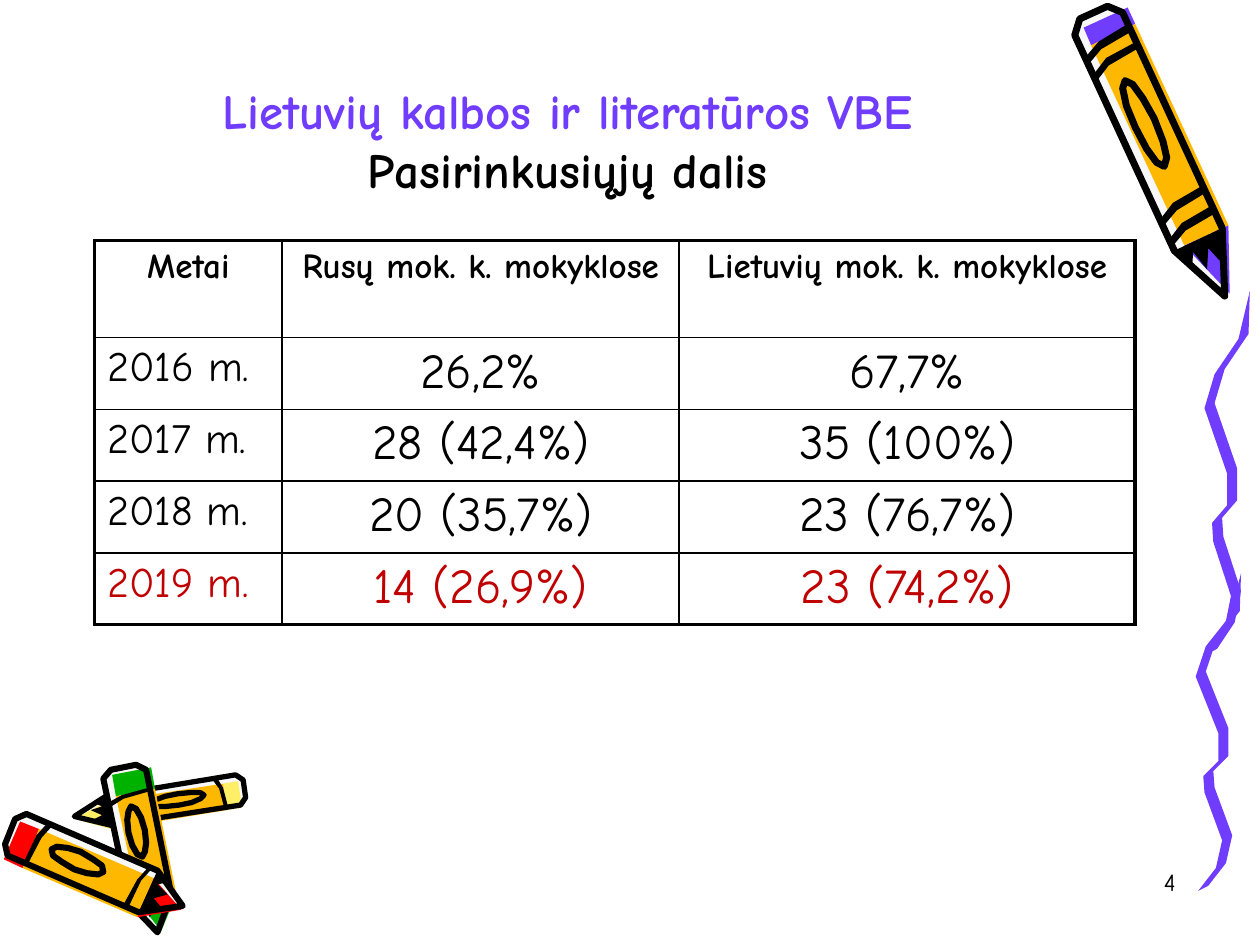
"""Build a slide with an exam table framed by crayons and a wavy ribbon."""
from math import cos, hypot, pi, sin
from lxml import etree
from pptx import Presentation
from pptx.dml.color import RGBColor
from pptx.enum.text import MSO_ANCHOR, PP_ALIGN
from pptx.oxml.ns import qn
from pptx.util import Pt

PX = 9144
FONT = "Comic Neue"
LEFT, MID, RIGHT = PP_ALIGN.LEFT, PP_ALIGN.CENTER, PP_ALIGN.RIGHT
TOP, LOW = MSO_ANCHOR.TOP, MSO_ANCHOR.BOTTOM
HUES = {"ink": "000000", "violet": "703DFF", "amber": "FFB800", "pale": "F8F8F8",
        "lemon": "FFEF66", "red": "FF0000", "green": "00B200", "mark": "C00000"}

TITLE = [("Lietuvių kalbos ir literatūros VBE", "violet"), ("Pasirinkusiųjų dalis", "ink")]
ROWS = [
    ("Metai", "Rusų mok. k. mokyklose", "Lietuvių mok. k. mokyklose"),
    ("2016 m.", "26,2%", "67,7%"),
    ("2017 m.", "28 (42,4%)", "35 (100%)"),
    ("2018 m.", "20 (35,7%)", "23 (76,7%)"),
    ("2019 m.", "14 (26,9%)", "23 (74,2%)"),
]
WIDTHS = [149, 315, 362]
HEIGHTS = [77, 57, 57, 57, 57]

CRAYONS = [
    {"tint": "lemon", "tail": (194, 626), "tip": (59, 648), "half": 12, "side": 1,
     "bands": [0.12], "pen": 3},
    {"tint": "green", "tail": (98, 609), "tip": (125, 740), "half": 17, "side": 1,
     "bands": [0.16], "pen": 3.5},
    {"tint": "red", "tail": (8, 660), "tip": (145, 719), "half": 18, "side": -1,
     "bands": [0.14, 0.72], "pen": 3.5},
    {"tint": "violet", "tail": (868, 10), "tip": (972, 235), "half": 21, "side": 1,
     "bands": [0.09, 0.15, 0.66, 0.73], "pen": 4},
]
NECK = 0.8
SHELL = [(0, -0.6), (0, 0.6), (0.04, 1), (NECK, 1), (1, 0), (NECK, -1), (0.04, -1)]
TEETH = [(NECK, -1), (NECK, 1), (0.89, 0.4), (0.84, 0.2), (0.9, -0.2), (0.83, -0.4),
         (0.88, -0.7)]

SPINE = [(36, 0), (31, 30), (12, 54), (4, 78), (22, 123), (22, 145), (10, 157),
         (11, 170), (25, 208), (20, 230), (6, 248)]
WAVES = [{"left": 949, "top": 455, "tall": 248}, {"left": 956, "top": 231, "tall": 284}]


def hue(name):
    return RGBColor.from_string(HUES[name])


def box(*sides):
    return [side * PX for side in sides]


def draw(slide, points, fill=None, pen=0):
    path = slide.shapes.build_freeform(*points[0], scale=PX)
    path.add_line_segments(points[1:], close=True)
    shape = path.convert_to_shape()
    shape.shadow.inherit = False
    if fill:
        shape.fill.solid()
        shape.fill.fore_color.rgb = hue(fill)
    else:
        shape.fill.background()
    if pen:
        shape.line.color.rgb = hue("ink")
        shape.line.width = Pt(pen)
    else:
        shape.line.fill.background()


def block(start, end):
    return [(start, -0.6), (start, 1.25), (end, 1.25), (end, -0.6)]


def band(start):
    front = [(start + 0.03, -1), (start, -0.3), (start - 0.01, 1)]
    back = [(along + 0.025, across) for along, across in front]
    return front + back[::-1]


def oval(steps=12):
    turns = [2 * pi * i / steps for i in range(steps)]
    return [(0.39 + 0.15 * cos(turn), 0.4 * sin(turn)) for turn in turns]


def crayon(slide, tint, tail, tip, half, side, bands, pen):
    """Place parts given as (share of length, share of half width)."""
    run, drop = tip[0] - tail[0], tip[1] - tail[1]
    size = hypot(run, drop)
    wide, high = side * half * drop / size, -side * half * run / size

    def place(part):
        return [(tail[0] + run * u + wide * v, tail[1] + drop * u + high * v)
                for u, v in part]

    cap = bands[0]
    point = [(NECK, -0.6), (NECK, 1.25), (1, 0.2)]
    layers = [(SHELL, "pale"), (block(0.03, cap), tint), (block(cap, NECK), "amber"),
              (point, tint), (TEETH, "ink")]
    layers += [(band(start), "ink") for start in bands]
    for part, fill in layers:
        draw(slide, place(part), fill=fill)
    for part in (SHELL, oval()):
        draw(slide, place(part), pen=pen)


def wave(slide, left, top, tall):
    """Thicken the spine into a ribbon that is pointed at its top."""
    grow = tall / SPINE[-1][1]
    right = [(left + x + 4, top + y * grow) for x, y in SPINE[1:]]
    near = [(x - 8, y + 4) for x, y in right]
    draw(slide, [(left + SPINE[0][0], top)] + right + near[::-1], fill="violet")


def write(frame, lines, size, bold=False, align=MID, anchor=TOP):
    frame.word_wrap = True
    frame.vertical_anchor = anchor
    for i, (text, tint) in enumerate(lines):
        para = frame.add_paragraph() if i else frame.paragraphs[0]
        para.alignment = align
        run = para.add_run()
        run.text = text
        font = run.font
        font.name, font.size, font.bold = FONT, Pt(size), bold
        font.color.rgb = hue(tint)


def edge(cell, sides):
    props = cell._tc.get_or_add_tcPr()
    for i, (tag, thick) in enumerate(sides):
        line = etree.Element(qn("a:" + tag), w=str(Pt(2.25 if thick else 1)))
        fill = etree.SubElement(line, qn("a:solidFill"))
        etree.SubElement(fill, qn("a:srgbClr"), val=HUES["ink"])
        props.insert(i, line)


def grid(slide):
    area = box(75, 191, sum(WIDTHS), sum(HEIGHTS))
    table = slide.shapes.add_table(len(ROWS), len(WIDTHS), *area).table
    table.first_row = table.horz_banding = False
    for col, width in zip(table.columns, WIDTHS):
        col.width = width * PX
    end, last = len(ROWS) - 1, len(WIDTHS) - 1
    for r, texts in enumerate(ROWS):
        table.rows[r].height = HEIGHTS[r] * PX
        for c, text in enumerate(texts):
            cell = table.cell(r, c)
            cell.fill.background()
            size = 20 if r == 0 else 24 if c == 0 else 28
            write(cell.text_frame, [(text, "mark" if r == end else "ink")], size,
                  bold=r == 0, align=LEFT if r and c == 0 else MID)
            edge(cell, [("lnL", c == 0), ("lnR", c == last),
                        ("lnT", r == 0), ("lnB", r == end)])


def main():
    deck = Presentation()
    deck.slide_width, deck.slide_height = box(1000, 750)
    slide = deck.slides.add_slide(deck.slide_layouts[6])
    for item in WAVES:
        wave(slide, **item)
    for item in CRAYONS:
        crayon(slide, **item)
    head = slide.shapes.add_textbox(*box(75, 44, 751, 118))
    write(head.text_frame, TITLE, 28, bold=True, anchor=LOW)
    grid(slide)
    page = slide.shapes.add_textbox(*box(735, 683, 208, 50))
    write(page.text_frame, [("4", "ink")], 14, align=RIGHT)
    deck.save("out.pptx")


if __name__ == "__main__":
    main()
